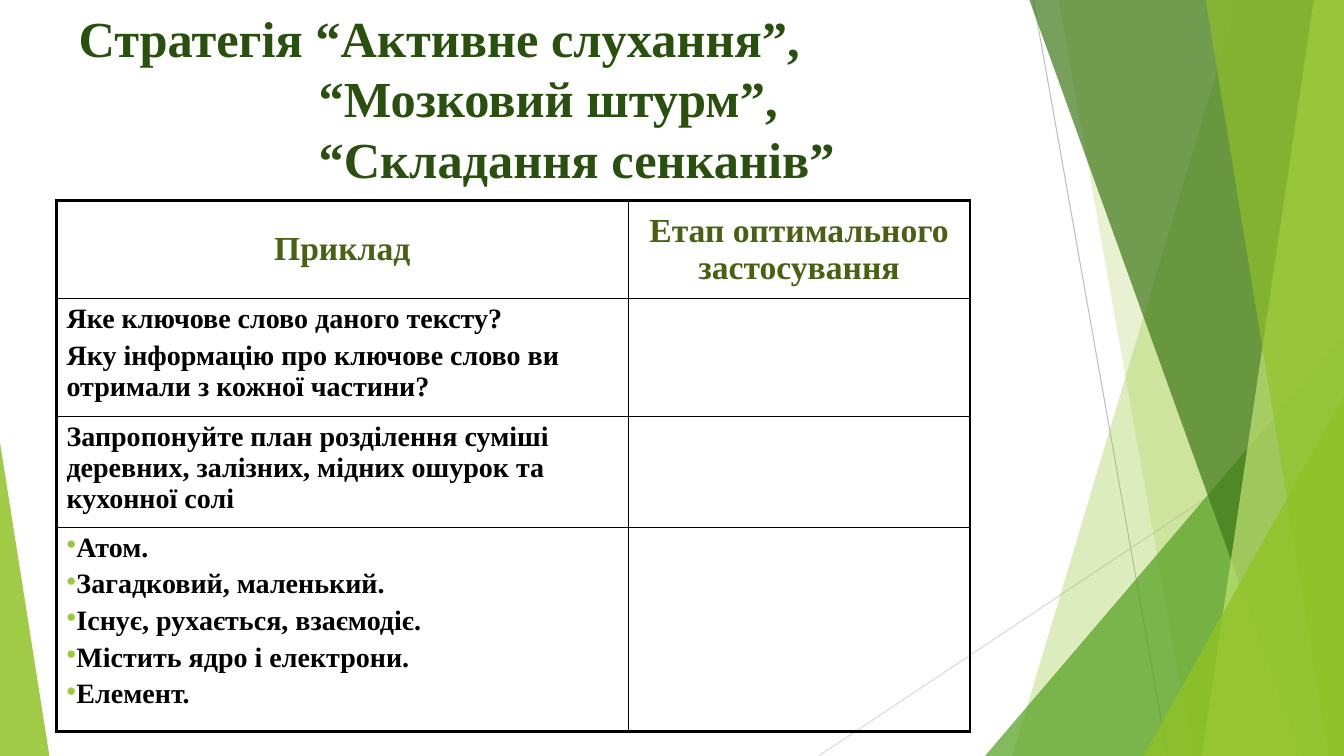
"""Build a slide on teaching strategies with an example table and a faceted green border."""
import pptx
import pptx.dml.color
import pptx.enum.shapes
import pptx.enum.text
import pptx.oxml.ns
import pptx.util
from lxml import etree

WIDTH, HEIGHT = 13.33, 7.5
FONT = "Times New Roman"
COLORS = {
    "title": "2A5010", "header": "486113", "text": "000000", "bullet": "99CA3C",
    "lime": "90C226", "green": "54A021", "forest": "3F7819", "pale": "C0E474",
    "gray": "BFBFBF", "silver": "D9D9D9",
}
TITLE = ["Стратегія “Активне слухання”,", "“Мозковий штурм”,", "“Складання сенканів”"]
TITLE_INDENTS = [0, 2.38, 2.38]
HEADERS = ["Приклад", "Етап оптимального застосування"]
EXAMPLES = [
    ["Яке ключове слово даного тексту?",
     "Яку інформацію про ключове слово ви отримали з кожної частини?"],
    ["Запропонуйте план розділення суміші деревних, залізних, мідних ошурок та кухонної солі"],
    ["Атом.", "Загадковий, маленький.", "Існує, рухається, взаємодіє.",
     "Містить ядро і електрони.", "Елемент."],
]
BULLETED_ROW = 3
COLUMNS, ROWS = [5.67, 3.39], [0.97, 1.17, 1.1, 2.03]
TABLE_LEFT, TABLE_TOP = 0.56, 1.99
OUTER, INNER = 2.25, 1

LINES = [((10.25, 0), (11.58, HEIGHT), "gray"), ((WIDTH, 4.03), (8.12, HEIGHT), "silver")]
FACETS = [
    ("band", 12.28, 10.04, "lime", 30),
    ("band", 10.5, 11.83, "lime", 20),
    ("right", 3.56, 4.17, "green", 72),
    ("band", 10.21, 12.91, "forest", 70),
    ("band", 13.03, 11.92, "pale", 70),
    ("band", 11.96, 13.18, "lime", 65),
    ("right", 1.99, 3.57, "lime", 80),
    ("left", 0.49, 3.11, "lime", 85),
]

inches, points = pptx.util.Inches, pptx.util.Pt


def rgb(name):
    return pptx.dml.color.RGBColor.from_string(COLORS[name])


def add_child(parent, tag, **attributes):
    return etree.SubElement(parent, pptx.oxml.ns.qn(tag), attributes)


def style(para, size, color):
    para.font.name, para.font.size, para.font.bold = FONT, points(size), True
    para.font.color.rgb = rgb(color)


def add_line(page, start, end, color):
    line = page.shapes.add_connector(
        pptx.enum.shapes.MSO_CONNECTOR.STRAIGHT, *map(inches, start + end))
    line.line.color.rgb = rgb(color)
    line.line.width = points(0.75)
    add_child(line._element.spPr, "a:effectLst")


def add_facet(page, kind, first, second, color, opacity):
    if kind == "band":
        corners = [(first, 0), (WIDTH, 0), (WIDTH, HEIGHT), (second, HEIGHT)]
        corners = [(inches(x), inches(y)) for x, y in corners]
        builder = page.shapes.build_freeform(*corners[0])
        builder.add_line_segments(corners[1:], close=True)
        facet = builder.convert_to_shape()
    else:
        left = WIDTH - first if kind == "right" else 0
        facet = page.shapes.add_shape(
            pptx.enum.shapes.MSO_SHAPE.ISOSCELES_TRIANGLE,
            *map(inches, (left, HEIGHT - second, first, second)))
        facet.adjustments[0] = 1 if kind == "right" else 0
    facet.shadow.inherit = False
    facet.fill.solid()
    facet.fill.fore_color.rgb = rgb(color)
    fill_color = facet._element.spPr.find(".//" + pptx.oxml.ns.qn("a:srgbClr"))
    add_child(fill_color, "a:alpha", val=str(opacity * 1000))
    facet.line.fill.background()


def add_title(page):
    box = page.shapes.title
    box.left, box.top, box.width, box.height = map(inches, (0.68, 0.02, 10.2, 1.9))
    frame = box.text_frame
    frame.word_wrap = True
    frame.vertical_anchor = pptx.enum.text.MSO_ANCHOR.TOP
    frame.auto_size = pptx.enum.text.MSO_AUTO_SIZE.NONE
    frame.text = "\n".join(TITLE)
    for para, indent in zip(frame.paragraphs, TITLE_INDENTS):
        para.alignment = pptx.enum.text.PP_ALIGN.LEFT
        para.line_spacing = points(43.2)
        para.space_before = points(0)
        para._p.get_or_add_pPr().set("marL", str(inches(indent)))
        style(para, 36, "title")


def set_borders(cell, row, column):
    edges = {"L": column == 0, "R": column == len(COLUMNS) - 1,
             "T": row == 0, "B": row == len(ROWS) - 1}
    properties = cell._tc.get_or_add_tcPr()
    for side, outer in edges.items():
        width = points(OUTER if outer else INNER)
        border = add_child(properties, "a:ln" + side, w=str(width))
        add_child(add_child(border, "a:solidFill"), "a:srgbClr", val=COLORS["text"])
    cell.fill.background()


def fill_cell(cell, lines, row):
    size, color = (24, "header") if row == 0 else (20, "text")
    cell.text_frame.text = "\n".join(lines)
    for para in cell.text_frame.paragraphs:
        style(para, size, color)
        para.space_before = points(size * 0.2)
        if row == 0:
            para.alignment = pptx.enum.text.PP_ALIGN.CENTER
            cell.vertical_anchor = pptx.enum.text.MSO_ANCHOR.MIDDLE
        if row == BULLETED_ROW:
            properties = para._p.get_or_add_pPr()
            add_child(add_child(properties, "a:buClr"), "a:srgbClr", val=COLORS["bullet"])
            add_child(properties, "a:buChar", char="•")


def add_examples(page):
    table = page.shapes.add_table(
        len(ROWS), len(COLUMNS),
        *map(inches, (TABLE_LEFT, TABLE_TOP, sum(COLUMNS), sum(ROWS)))).table
    table.first_row = table.horz_banding = False
    for column, width in zip(table.columns, COLUMNS):
        column.width = inches(width)
    for row, height in zip(table.rows, ROWS):
        row.height = inches(height)
    content = [[[header] for header in HEADERS]] + [[lines, []] for lines in EXAMPLES]
    for row, cells in enumerate(content):
        for column, lines in enumerate(cells):
            cell = table.cell(row, column)
            set_borders(cell, row, column)
            if lines:
                fill_cell(cell, lines, row)


def main():
    deck = pptx.Presentation()
    deck.slide_width, deck.slide_height = inches(WIDTH), inches(HEIGHT)
    page = deck.slides.add_slide(deck.slide_layouts.get_by_name("Title Only"))
    for line in LINES:
        add_line(page, *line)
    for facet in FACETS:
        add_facet(page, *facet)
    add_title(page)
    add_examples(page)
    deck.save("out.pptx")


if __name__ == "__main__":
    main()
